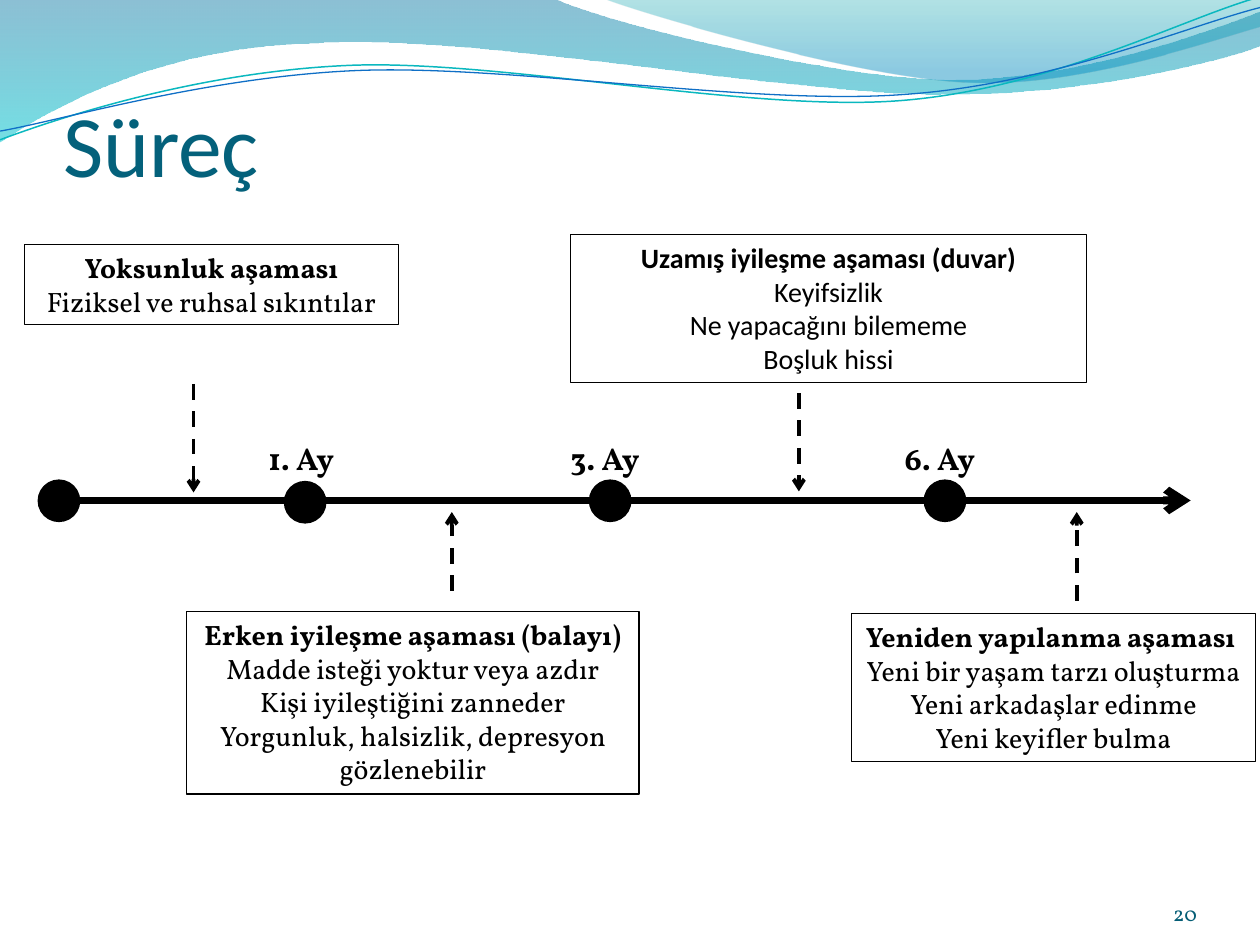
import dataclasses

import lxml.etree
import pptx
import pptx.dml.color
import pptx.enum.dml
import pptx.enum.shapes
import pptx.enum.text
import pptx.oxml.ns
import pptx.util

Pt = pptx.util.Pt
RGB = pptx.dml.color.RGBColor
ALIGN = pptx.enum.text.PP_ALIGN
ANCHOR = pptx.enum.text.MSO_ANCHOR
FIT = pptx.enum.text.MSO_AUTO_SIZE
SHAPE = pptx.enum.shapes.MSO_SHAPE
DASH = pptx.enum.dml.MSO_LINE.DASH
qn = pptx.oxml.ns.qn

BLACK = RGB(0x00, 0x00, 0x00)
TITLE = RGB(0x04, 0x61, 0x7B)
NUMBER = RGB(0x04, 0x5D, 0x75)
TEAL = RGB(0x0A, 0xB8, 0xBF)
BLUE = RGB(0x0F, 0x6F, 0xC6)
SERIF, SANS = "Vollkorn", "Calibri"
AXIS = 286
DOT = 22.4


@dataclasses.dataclass
class Wave:
    points: list  # a pair is a corner, six numbers are a cubic curve
    stops: tuple = ()  # (position, colour, opacity in percent)
    color: RGB = BLACK
    width: float = 0


@dataclasses.dataclass
class Stage:
    box: tuple
    head: str
    lines: list
    arrow: tuple  # x, y of the tail, y of the head
    font: str = SERIF


@dataclasses.dataclass
class Mark:
    x: float
    y: float = 275
    label: str = ""
    left: float = 0


WAVES = [
    Wave([(0, 0), (316.8, -0.7),
          (342.7, 12.2, 478.1, 45.4, 545.8, 45.4),
          (614.2, 45.4, 689.8, 18.7, 720, 6.5), (720.7, 25.9),
          (707.8, 31.7, 626.4, 54.7, 537.1, 54),
          (447.8, 54, 275, 20.2, 185, 24.5),
          (92.9, 25.9, 33.1, 59.8, -0.7, 81.4), (0, 0)],
         ((0, RGB(0x00, 0x74, 0xA1), 45), (1, RGB(0x00, 0xC6, 0xCF), 55))),
    Wave([(344.9, -0.7), (366.5, 7.9, 491, 44.6, 553.7, 46.8),
          (616.3, 49.7, 691.9, 23, 720, 15.1), (720, 0), (344.9, -0.7)],
         ((0, RGB(0x00, 0xA1, 0xA9), 30), (0.8, RGB(0x00, 0x8B, 0xBF), 45))),
    Wave([(0, 79.9), (34.6, 67, 113.8, 41, 199.4, 37.4),
          (284.4, 33.8, 427, 64.1, 513.4, 57.6),
          (599.8, 51.1, 675.4, 10.8, 718.6, -1.4)], color=TEAL, width=0.85),
    Wave([(0, 74.9), (33.8, 69.1, 118.1, 43.9, 203.8, 40.3),
          (290.2, 36.7, 429.8, 60.5, 516.2, 54),
          (601.9, 48.2, 677.5, 15.1, 720, 4.3)], color=BLUE, width=0.75),
]

MARKS = [Mark(22.5), Mark(163.2, 275.8, "1. Ay", 146.2),
         Mark(337.5, label="3. Ay", left=318.8), Mark(528.8, label="6. Ay", left=509.8)]

STAGES = [
    Stage((14, 139.6, 213.8, 46), "Yoksunluk aşaması",
          ["Fiziksel ve ruhsal sıkıntılar"], (110.6, 219.4, 281.4)),
    Stage((106.7, 349.4, 258.5, 104.4), "Erken iyileşme aşaması (balayı)",
          ["Madde isteği yoktur veya azdır", "Kişi iyileştiğini zanneder",
           "Yorgunluk, halsizlik, depresyon gözlenebilir"],
          (258.2, 337.7, 292.6)),
    Stage((325.9, 133.9, 295.2, 84.8), "Uzamış iyileşme aşaması (duvar)",
          ["Keyifsizlik", "Ne yapacağını bilememe", "Boşluk hissi"],
          (456.5, 224.6, 280.8), SANS),
    Stage((486.7, 350.5, 230.6, 84.8), "Yeniden yapılanma aşaması ",
          ["Yeni bir yaşam tarzı oluşturma", "Yeni arkadaşlar edinme",
           "Yeni keyifler bulma"], (615.3, 343.4, 292.6)),
]


def write(shape, lines: list, size: float, font: str = SERIF, color: RGB = BLACK,
          bold: int = 0, align=ALIGN.LEFT, anchor=ANCHOR.TOP, wrap: bool = True,
          inset: tuple = (7.2, 3.6, 7.2, 3.6), fit=FIT.NONE) -> None:
    """Write one paragraph per line; the first `bold` lines are bold."""
    frame = shape.text_frame
    frame.word_wrap, frame.auto_size, frame.vertical_anchor = wrap, fit, anchor
    (frame.margin_left, frame.margin_top,
     frame.margin_right, frame.margin_bottom) = map(Pt, inset)
    for i, line in enumerate(lines):
        para = frame.paragraphs[0] if i == 0 else frame.add_paragraph()
        para.alignment = align
        run = para.add_run()
        run.text = line
        run.font.size, run.font.name, run.font.bold = Pt(size), font, i < bold
        run.font.color.rgb = color


def bend(shape, parts: list) -> None:
    """Join each three straight steps of a curve into one cubic step."""
    steps = iter(list(shape.element.iter(qn("a:lnTo"))))
    for part in parts:
        group = [next(steps) for _ in range(len(part) // 2)]
        if len(group) == 3:
            curve = lxml.etree.Element(qn("a:cubicBezTo"))
            group[0].addprevious(curve)
            for step in group:
                curve.append(step[0])
                step.getparent().remove(step)


def draw_wave(slide, wave: Wave) -> None:
    first, *rest = [(Pt(x), Pt(y)) for part in wave.points
                    for x, y in zip(part[::2], part[1::2])]
    outline = slide.shapes.build_freeform(*first)
    outline.add_line_segments(rest, close=bool(wave.stops))
    shape = outline.convert_to_shape()
    bend(shape, wave.points[1:])
    shape.shadow.inherit = False
    if not wave.stops:
        shape.fill.background()
        shape.line.color.rgb, shape.line.width = wave.color, Pt(wave.width)
        return
    shape.line.fill.background()
    shape.fill.gradient()
    shape.fill.gradient_angle = 270
    for stop, (pos, color, _) in zip(shape.fill.gradient_stops, wave.stops):
        stop.position, stop.color.rgb = pos, color
    for node, (_, _, alpha) in zip(shape.element.spPr.iter(qn("a:srgbClr")), wave.stops):
        lxml.etree.SubElement(node, qn("a:alpha"), val=str(alpha * 1000))


def draw_arrow(slide, ends: tuple, width: float, dash=None) -> None:
    line = slide.shapes.add_connector(
        pptx.enum.shapes.MSO_CONNECTOR.STRAIGHT, *map(Pt, ends))
    line.line.color.rgb, line.line.width = BLACK, Pt(width)
    if dash:
        line.line.dash_style = dash
    props = line.element.spPr
    lxml.etree.SubElement(props.find(qn("a:ln")), qn("a:tailEnd"), type="arrow")
    lxml.etree.SubElement(props, qn("a:effectLst"))


def draw_dot(slide, mark: Mark) -> None:
    dot = slide.shapes.add_shape(
        SHAPE.OVAL, *map(Pt, (mark.x, mark.y, DOT, DOT)))
    dot.shadow.inherit = False
    dot.fill.solid()
    dot.fill.fore_color.rgb = dot.line.color.rgb = BLACK
    dot.line.width = Pt(2)


def draw_stage(slide, stage: Stage) -> None:
    box = slide.shapes.add_shape(SHAPE.RECTANGLE, *map(Pt, stage.box))
    box.shadow.inherit = False
    box.fill.background()
    box.line.color.rgb, box.line.width = BLACK, Pt(0.75)
    write(box, [stage.head, *stage.lines], 16, font=stage.font, bold=1,
          align=ALIGN.CENTER, fit=FIT.SHAPE_TO_FIT_TEXT)


def main() -> None:
    deck = pptx.Presentation()
    deck.slide_width, deck.slide_height = Pt(720), Pt(540)
    slide = deck.slides.add_slide(deck.slide_layouts[5])

    # Waves at the top, behind the title
    for wave in WAVES:
        draw_wave(slide, wave)

    # Title and slide number
    title = slide.shapes.title
    title.element.getparent().append(title.element)
    title.left, title.top, title.width, title.height = map(Pt, (36, 9.4, 594, 102.2))
    write(title, ["Süreç"], 50, font=SANS, color=TITLE, anchor=ANCHOR.BOTTOM,
          inset=(0, 3.6, 0, 0))
    number = slide.shapes.add_textbox(*map(Pt, (624.2, 500.4, 59.8, 28.8)))
    write(number, ["20"], 12, color=NUMBER, align=ALIGN.RIGHT,
          anchor=ANCHOR.BOTTOM, inset=(0, 0, 0, 0))

    # Timeline with its months
    draw_arrow(slide, (33.8, AXIS, 680.4, AXIS), 4.5)
    for mark in MARKS:
        draw_dot(slide, mark)
        if mark.label:
            label = slide.shapes.add_textbox(*map(Pt, (mark.left, 247.3, 56.2, 28.8)))
            write(label, [mark.label], 18, bold=1, wrap=False,
                  fit=FIT.SHAPE_TO_FIT_TEXT)

    # Stages and their pointers
    for stage in STAGES:
        draw_stage(slide, stage)
        x, tail, head = stage.arrow
        draw_arrow(slide, (x, tail, x, head), 2.25, DASH)

    deck.save("out.pptx")


if __name__ == "__main__":
    main()
